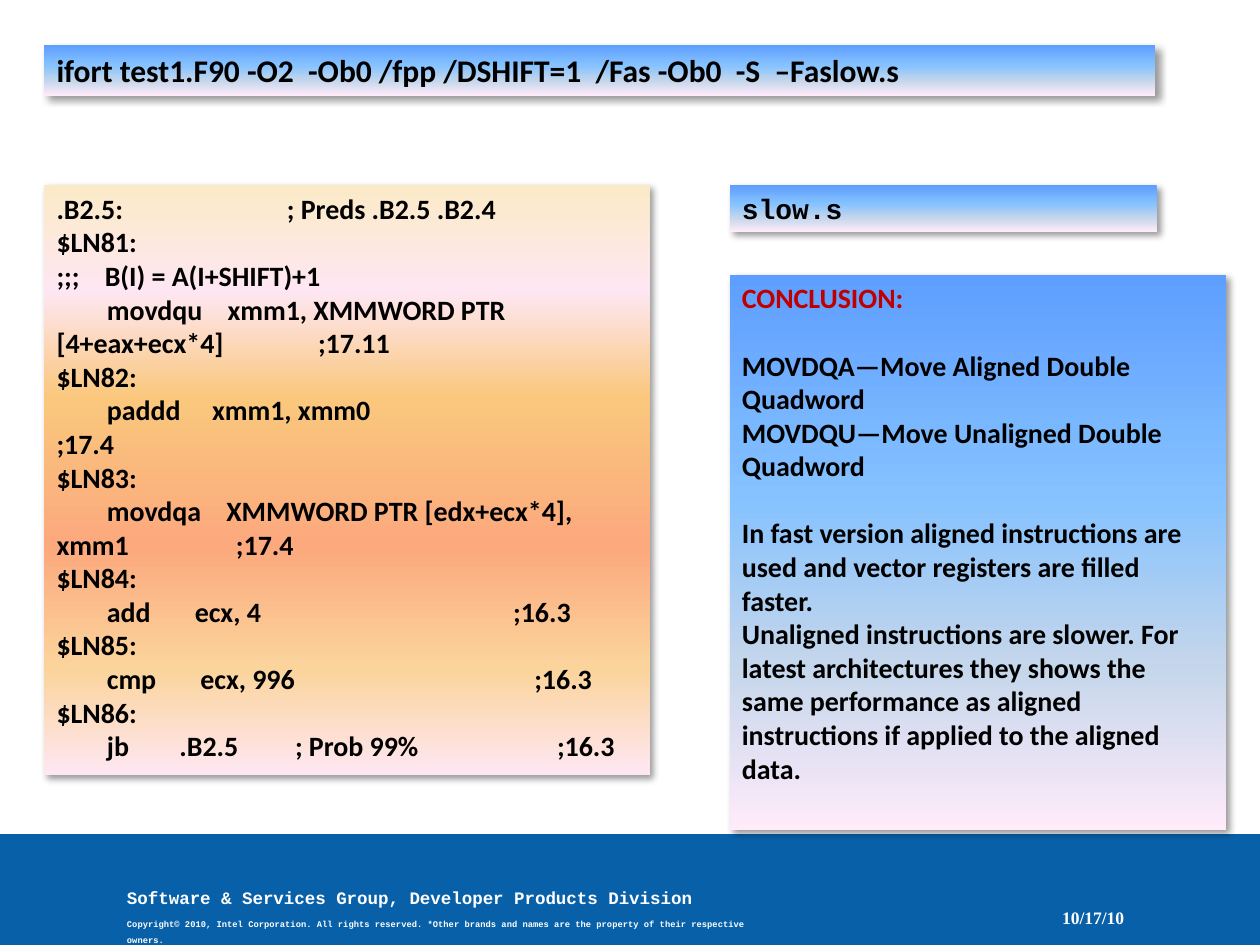
from dataclasses import dataclass

from lxml import etree
from pptx import Presentation
from pptx.dml.color import RGBColor
from pptx.enum.shapes import MSO_SHAPE
from pptx.enum.text import MSO_ANCHOR, PP_ALIGN
from pptx.oxml.ns import qn
from pptx.util import Inches, Pt

RECT = MSO_SHAPE.RECTANGLE
TOP, MIDDLE = MSO_ANCHOR.TOP, MSO_ANCHOR.MIDDLE
LEFT, RIGHT = PP_ALIGN.LEFT, PP_ALIGN.RIGHT
SANS, MONO, SERIF = "Calibri", "Courier New", "Times New Roman"

COLORS = {"band": "0860A8", "white": "FFFFFF", "black": "000000", "red": "C00000"}
# Gradient stops: percent and colour, top to bottom
BLUE = [(0, "5E9EFF"), (40, "85C2FF"), (70, "C4D6EB"), (100, "FFEBFA")]
WARM = [(0, "FBEAC7"), (18, "FEE7F2"), (36, "FAC77D"),
        (61, "FBA97D"), (82, "FBD49C"), (100, "FEE7F2")]

CODE = """\
.B2.5:                          ; Preds .B2.5 .B2.4
$LN81:
;;;    B(I) = A(I+SHIFT)+1
        movdqu    xmm1, XMMWORD PTR [4+eax+ecx*4]               ;17.11
$LN82:
        paddd     xmm1, xmm0                                    ;17.4
$LN83:
        movdqa    XMMWORD PTR [edx+ecx*4], xmm1                 ;17.4
$LN84:
        add       ecx, 4                                        ;16.3
$LN85:
        cmp       ecx, 996                                      ;16.3
$LN86:
        jb        .B2.5         ; Prob 99%                      ;16.3"""


@dataclass
class Line:
    text: str
    size: float = 16
    font: str = SANS
    color: str = "black"
    before: float = 0
    spacing: float = 1.0
    align: PP_ALIGN = LEFT


@dataclass
class Panel:
    left: float
    top: float
    width: float
    height: float
    stops: list[tuple[int, str]]
    lines: list[Line]


def write(frame, lines: list[Line], anchor=TOP, wrap: bool = True) -> None:
    frame.text = "\n".join(line.text for line in lines)
    frame.word_wrap = wrap
    frame.vertical_anchor = anchor
    for para, line in zip(frame.paragraphs, lines):
        para.alignment = line.align
        para.line_spacing = line.spacing
        if line.before:
            para.space_before = Pt(line.before)
        for run in para.runs:
            run.font.size = Pt(line.size)
            run.font.name = line.font
            run.font.bold = True
            run.font.color.rgb = RGBColor.from_string(COLORS[line.color])


def add_rect(slide, left: float, top: float, width: float, height: float):
    shape = slide.shapes.add_shape(
        RECT, Inches(left), Inches(top), Inches(width), Inches(height))
    shape.shadow.inherit = False
    shape.line.fill.background()
    return shape


def add_text(slide, left: float, top: float, width: float, height: float,
             lines: list[Line], anchor=TOP, wrap: bool = True) -> None:
    box = slide.shapes.add_textbox(
        Inches(left), Inches(top), Inches(width), Inches(height))
    write(box.text_frame, lines, anchor, wrap)


def add_stop(parent, color: str, **attrs: str):
    node = etree.SubElement(parent, qn("a:srgbClr"), val=color)
    for name, value in attrs.items():
        etree.SubElement(node, qn(f"a:{name}"), val=value)


def add_panel(slide, panel: Panel) -> None:
    shape = add_rect(slide, panel.left, panel.top, panel.width, panel.height)
    # Gradient running from top to bottom
    shape.fill.gradient()
    shape.fill.gradient_angle = 270
    props = shape.element.spPr
    stops = props.find(".//" + qn("a:gsLst"))
    for old in list(stops):
        stops.remove(old)
    for place, color in panel.stops:
        add_stop(etree.SubElement(stops, qn("a:gs"), pos=str(place * 1000)), color)
    # Soft shadow to the lower right
    shadow = etree.SubElement(
        props.find(qn("a:effectLst")), qn("a:outerShdw"),
        blurRad=str(Pt(4)), dist=str(Pt(3)), dir=str(45 * 60000),
        algn="tl", rotWithShape="0")
    add_stop(shadow, COLORS["black"], alpha="40000")
    write(shape.text_frame, panel.lines)


PANELS = [
    Panel(0.35, 0.36, 8.82, 0.4, BLUE, [
        Line("ifort test1.F90 -O2  -Ob0 /fpp /DSHIFT=1  /Fas -Ob0  -S  –Faslow.s", 18)]),
    Panel(0.35, 1.47, 4.81, 4.68, WARM, [Line(row) for row in CODE.splitlines()]),
    Panel(5.79, 1.47, 3.39, 0.37, BLUE, [Line("slow.s", font=MONO)]),
    Panel(5.79, 2.18, 3.94, 4.41, BLUE, [
        Line("CONCLUSION:", color="red"),
        Line("MOVDQA—Move Aligned Double Quadword", before=19.2),
        Line("MOVDQU—Move Unaligned Double Quadword"),
        Line("In fast version aligned instructions are used and vector "
             "registers are filled faster.", before=19.2),
        Line("Unaligned instructions are slower. For latest architectures they "
             "shows the same performance as aligned instructions if applied to "
             "the aligned data.")]),
]


def main() -> None:
    deck = Presentation()
    deck.slide_width, deck.slide_height = Inches(10), Inches(7.5)
    slide = deck.slides.add_slide(deck.slide_layouts[6])

    # Footer band with division, copyright and date
    band = add_rect(slide, 0, 6.62, 10, 0.88)
    band.fill.solid()
    band.fill.fore_color.rgb = RGBColor.from_string(COLORS["band"])
    add_text(slide, 0.91, 6.96, 5.13, 0.45, [
        Line("Software & Services Group, Developer Products Division",
             10, MONO, "white", spacing=1.2),
        Line("Copyright© 2010, Intel Corporation. All rights reserved. *Other brands "
             "and names are the property of their respective owners.",
             5, MONO, "white", before=3.1, spacing=1.5)], wrap=False)
    add_text(slide, 7.81, 7.1, 1.21, 0.4, [
        Line("10/17/10", 10, SERIF, "white", spacing=0.8, align=RIGHT)], MIDDLE)

    # Command, listing, file name and conclusion
    for panel in PANELS:
        add_panel(slide, panel)

    deck.save("out.pptx")


if __name__ == "__main__":
    main()
